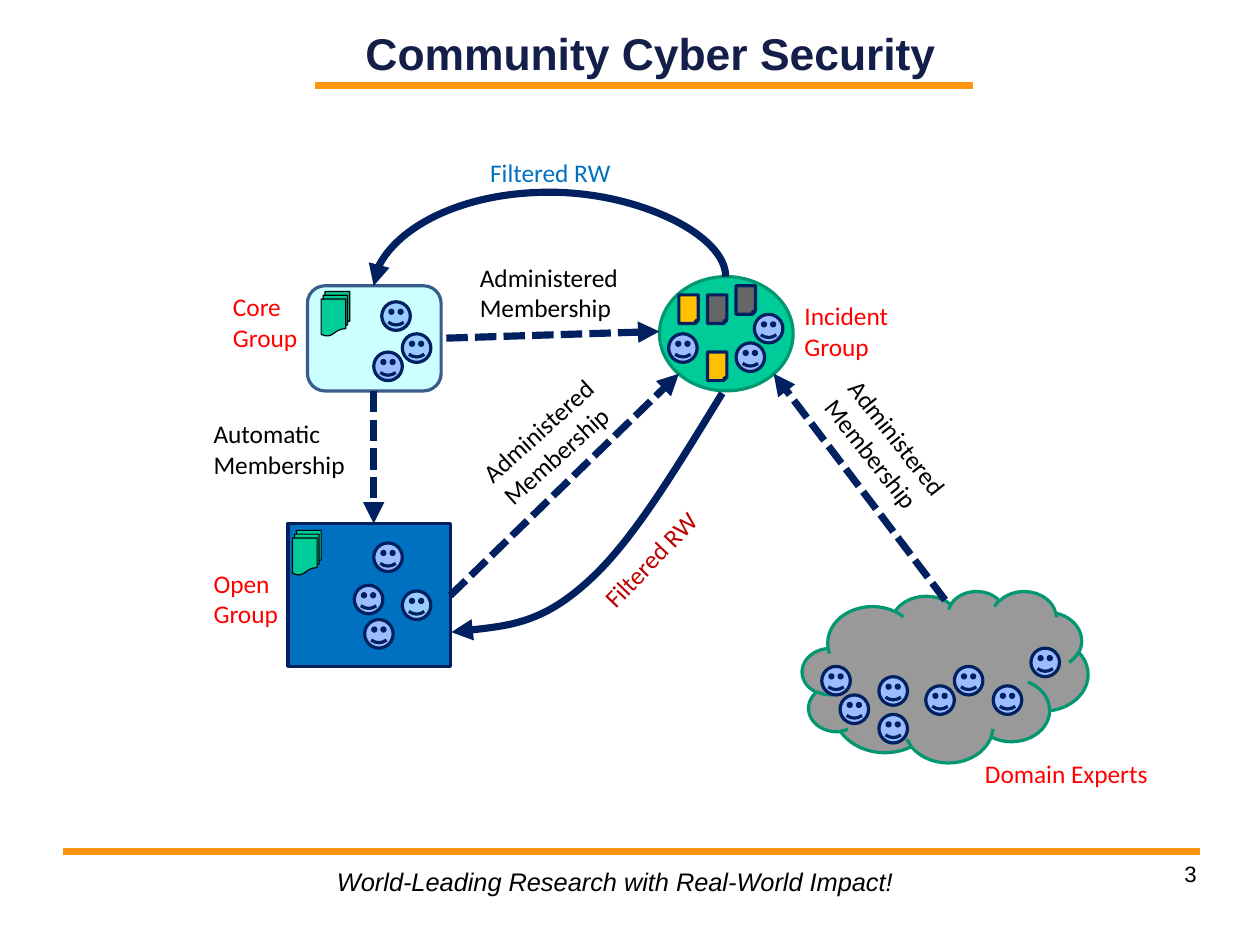
from lxml import etree
from pptx import Presentation
from pptx.dml.color import RGBColor
from pptx.enum.dml import MSO_LINE
from pptx.enum.shapes import MSO_CONNECTOR as Connector, MSO_SHAPE as Shape
from pptx.enum.text import MSO_ANCHOR as Anchor, MSO_AUTO_SIZE as AutoSize, PP_ALIGN as Align
from pptx.oxml.ns import qn
from pptx.util import Emu, Pt

PX = 9144
SLIDE_SIZE = {"slide_width": Emu(10080625), "slide_height": Emu(7559675)}
COLORS = {
    "orange": "FF950E", "title": "131F49", "black": "000000", "red": "FF0000",
    "dark_red": "C00000", "blue": "0070C0", "navy": "002060", "steel": "385D8A",
    "pale": "CCFFFF", "green": "00CC99", "dark_green": "009771", "cloud": "999999",
    "face": "9BBCFF", "light_face": "99CCFF", "gold": "FFC000", "grey": "666666",
}


def px(value):
    return Emu(round(value * PX))


def color(name):
    return RGBColor.from_string(COLORS[name])


def apply_format(target, **values):
    for name, value in values.items():
        setattr(target, name, value)


def place(shape, box):
    apply_format(shape, **dict(zip(("left", "top", "width", "height"), map(px, box))))


def write(shape, text, ink="black", size=16, font="Calibri", align=Align.LEFT, **style):
    paragraph = shape.text_frame.paragraphs[0]
    paragraph.alignment = align
    run = paragraph.add_run()
    run.text = text
    apply_format(run.font, size=Pt(size), name=font, **style)
    run.font.color.rgb = color(ink)


def add_label(slide, box, text, ink="black", rotation=0, wrap=True, margin=None, **style):
    label = slide.shapes.add_textbox(*map(px, box))
    label.rotation = rotation
    label.text_frame.word_wrap = wrap
    if margin is not None:
        sides = ("left", "top", "right", "bottom")
        apply_format(label.text_frame, **{f"margin_{side}": px(margin) for side in sides})
    write(label, text, ink, **style)


def add_block(slide, kind, box, fill, line, weight=2):
    shape = slide.shapes.add_shape(kind, *map(px, box))
    shape.shadow.inherit = False
    shape.fill.solid()
    shape.fill.fore_color.rgb = color(fill)
    shape.line.color.rgb = color(line)
    shape.line.width = Pt(weight)


def style_line(shape, ink="navy", weight=4.5, dashed=False, arrow="tailEnd"):
    shape.line.color.rgb = color(ink)
    shape.line.width = Pt(weight)
    if dashed:
        shape.line.dash_style = MSO_LINE.SQUARE_DOT
    properties = shape._element.spPr
    if arrow:
        etree.SubElement(properties.find(qn("a:ln")), qn(f"a:{arrow}"), type="triangle")
    if properties.find(qn("a:effectLst")) is None:
        etree.SubElement(properties, qn("a:effectLst"))


def add_line(slide, start, end, **style):
    line = slide.shapes.add_connector(Connector.STRAIGHT, *map(px, (*start, *end)))
    style_line(line, **style)


def add_arch(slide, start, end, rise):
    length, drop = start[0] - end[0], end[1] - start[1]
    arch = slide.shapes.add_connector(Connector.CURVE, *map(px, (*start, *end)))
    middle = ((start[0] + end[0]) / 2, (start[1] + end[1]) / 2)
    place(arch, (middle[0] - drop / 2, middle[1] - length / 2, drop, length))
    properties = arch._element.spPr
    for name, value in {"rot": "16200000", "flipH": "1", "flipV": "1"}.items():
        properties.find(qn("a:xfrm")).set(name, value)
    guides = properties.find(qn("a:prstGeom")).get_or_add_avLst()
    bend = round(-rise / drop * 100000)
    etree.SubElement(guides, qn("a:gd"), name="adj1", fmla=f"val {bend}")
    style_line(arch)


def add_curve(slide, start, points):
    builder = slide.shapes.build_freeform(*start, scale=PX)
    builder.add_line_segments(points, close=False)
    curve = builder.convert_to_shape()
    curve.shadow.inherit = False
    curve.fill.background()
    outline = curve._element.spPr.find(".//" + qn("a:path"))
    segments = outline.findall(qn("a:lnTo"))
    for first in range(0, len(segments), 3):
        bezier = etree.SubElement(outline, qn("a:cubicBezTo"))
        for segment in segments[first:first + 3]:
            bezier.append(segment[0])
            outline.remove(segment)
    style_line(curve)


def draw_frame(slide):
    title = slide.shapes.title
    place(title, (285, 9, 568, 75))
    apply_format(title.text_frame, vertical_anchor=Anchor.MIDDLE,
                 auto_size=AutoSize.NONE, word_wrap=True)
    write(title, "Community Cyber Security", "title", 28, "Arial", Align.CENTER, bold=True)
    for left, right, top in ((276, 851, 75), (55, 1050, 745)):
        add_line(slide, (left, top), (right, top), ink="orange", weight=4.31, arrow=None)
    add_label(slide, (790, 753, 257, 57), "3", margin=0, size=14, font="Arial", align=Align.RIGHT)
    add_label(slide, (285, 753, 508, 37), "World-Leading Research with Real-World Impact!",
              wrap=False, font="Arial", italic=True)


def draw_group(slide, box, kind, fill, line, faces, documents=(), sheets=()):
    left, top = box[:2]
    add_block(slide, kind, box, fill, line)
    for x, y, paint in sheets:
        add_block(slide, Shape.FOLDED_CORNER, (left + x, top + y, 17, 25), paint, "navy")
    for paint, spots in faces.items():
        for x, y in spots:
            add_block(slide, Shape.SMILEY_FACE, (left + x, top + y, 25, 25), paint, "navy")
    for x, y in documents:
        add_block(slide, Shape.FLOWCHART_MULTIDOCUMENT, (left + x, top + y, 25, 39),
                  "green", "black", 0.75)


def draw_groups(slide):
    draw_group(slide, (269, 250, 117, 92), Shape.FLOWCHART_ALTERNATE_PROCESS, "pale", "steel",
               {"light_face": [(65, 14), (83, 42)], "face": [(58, 58)]}, [(12, 5)])
    draw_group(slide, (252, 458, 142, 125), Shape.RECTANGLE, "blue", "navy",
               {"face": [(58, 54), (67, 84), (75, 17)], "light_face": [(100, 59)]}, [(4, 6)])
    draw_group(slide, (577, 242, 117, 100), Shape.OVAL, "green", "dark_green",
               {"face": [(8, 50), (83, 33), (67, 58)]},
               sheets=[(17, 16, "gold"), (42, 16, "grey"), (67, 8, "grey"), (42, 66, "gold")])
    draw_group(slide, (702, 517, 250, 150), Shape.CLOUD, "cloud", "dark_green",
               {"face": [(33, 91), (67, 108), (108, 83), (67, 75),
                         (17, 66), (133, 66), (167, 83), (200, 50)]})
    for box, text in (((194, 250, 83, 64), "Core Group"), ((694, 258, 108, 64), "Incident Group"),
                      ((177, 492, 92, 64), "Open Group"), ((852, 658, 217, 37), "Domain Experts")):
        add_label(slide, box, text, "red")


def draw_flows(slide):
    for start, end, arrow in (((577, 290), (385, 296), "headEnd"),
                              ((394, 521), (594, 327), "tailEnd"),
                              ((327, 342), (327, 458), "tailEnd"),
                              ((827, 525), (677, 327), "tailEnd")):
        add_line(slide, start, end, dashed=True, arrow=arrow)
    add_arch(slide, (635, 242), (327, 250), 74)
    add_curve(slide, (632, 344), [(592, 409), (553, 475), (513, 510),
                                  (474, 545), (434, 549), (395, 553)])
    for box, text, ink, rotation in (
            ((177, 361, 158, 64), "Automatic Membership", "black", 0),
            ((410, 224, 158, 64), "Administered Membership", "black", 0),
            ((406, 346, 167, 64), "Administered Membership", "black", 318),
            ((692, 385, 206, 64), "Administered Membership", "black", 51.7),
            ((419, 133, 142, 37), "Filtered RW", "blue", 0),
            ((504, 465, 142, 37), "Filtered RW", "dark_red", 313.9)):
        add_label(slide, box, text, ink, rotation)


def main():
    presentation = Presentation()
    apply_format(presentation, **SLIDE_SIZE)
    slide = presentation.slides.add_slide(presentation.slide_layouts[5])
    draw_frame(slide)
    draw_groups(slide)
    draw_flows(slide)
    presentation.save("out.pptx")


if __name__ == "__main__":
    main()
